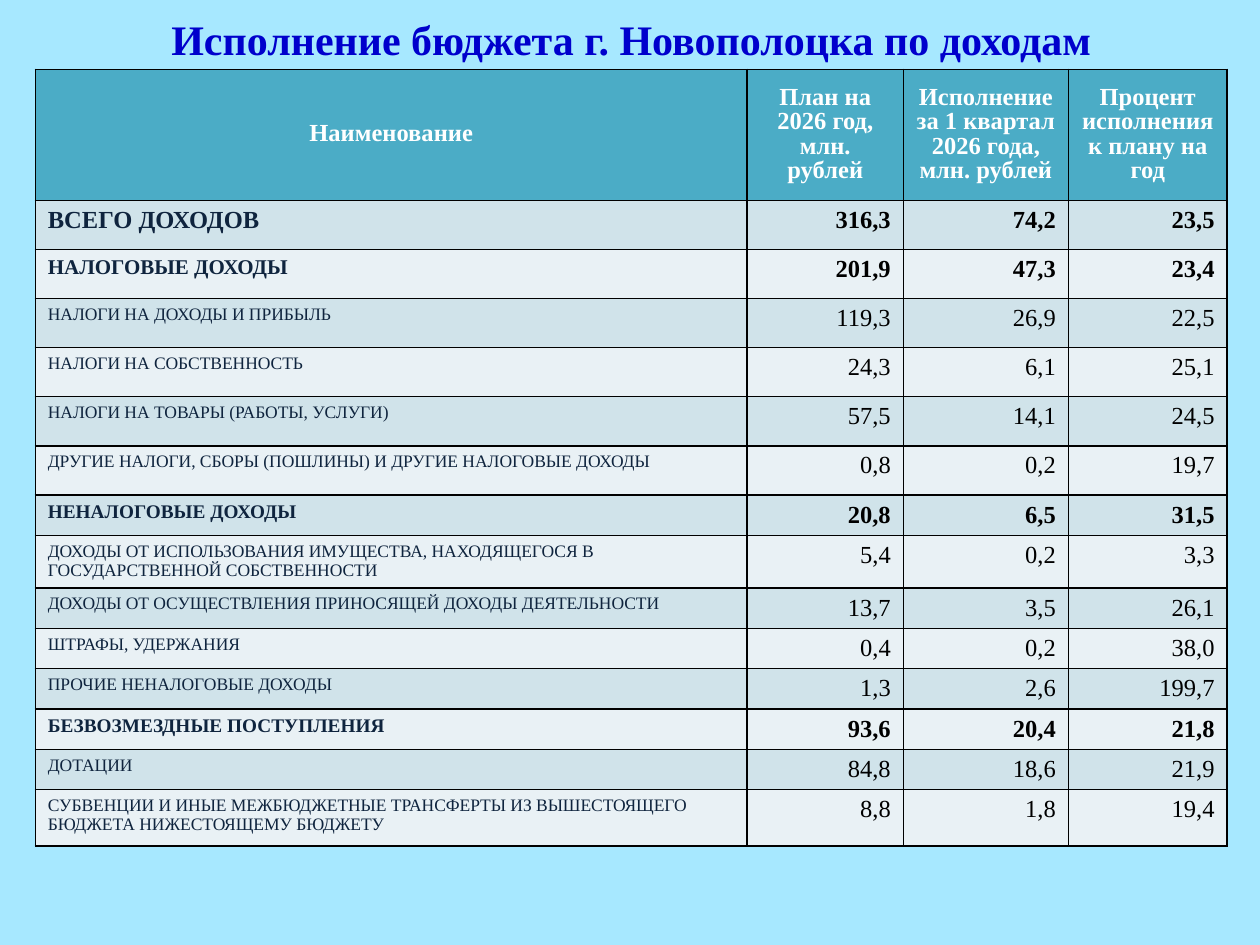
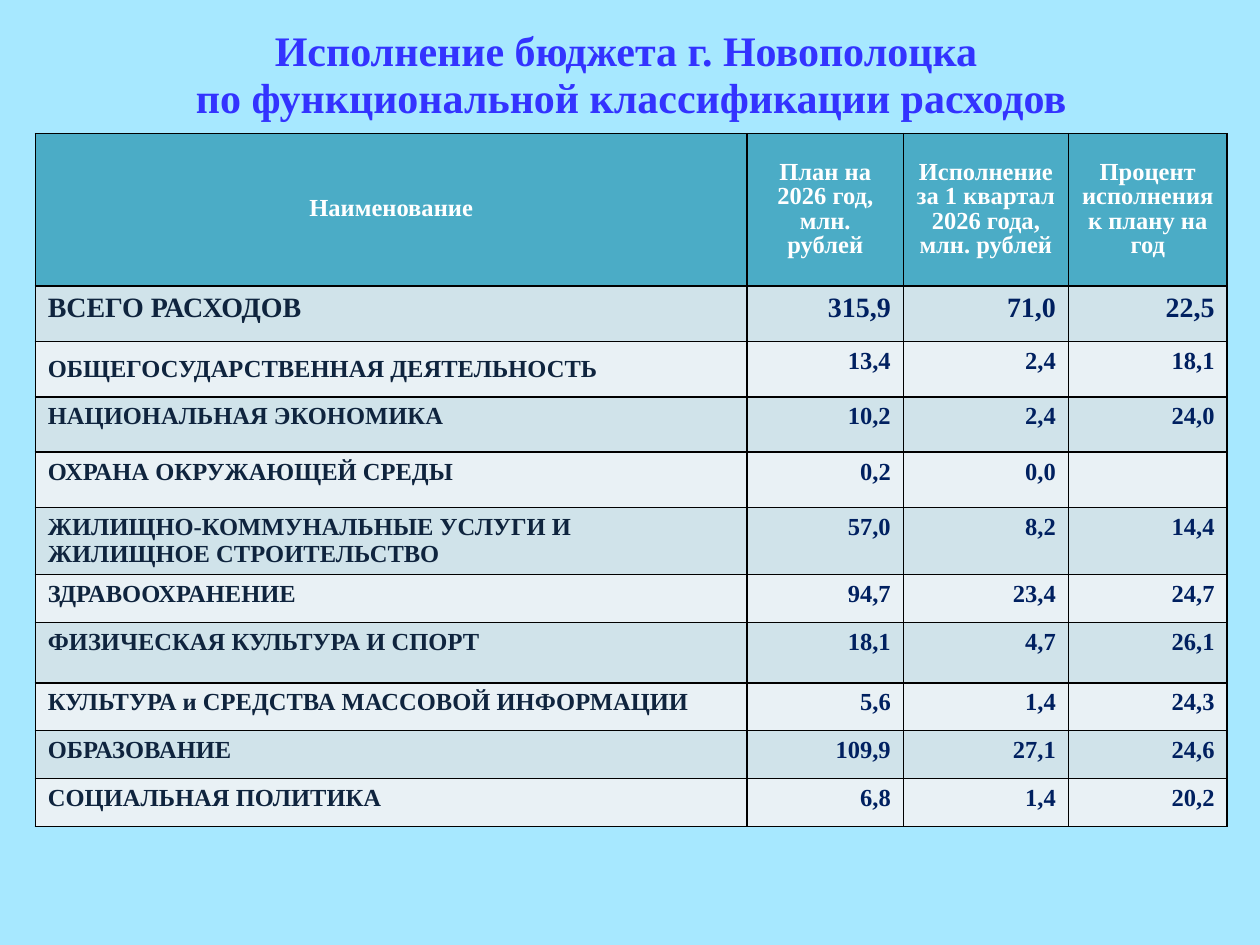
import pptx
import pptx.util
import pptx.dml.color
import pptx.enum.text
import pptx.oxml

Inches = pptx.util.Inches
Pt = pptx.util.Pt
RGB = pptx.dml.color.RGBColor
ALIGN = pptx.enum.text.PP_ALIGN
MIDDLE = pptx.enum.text.MSO_ANCHOR.MIDDLE

SKY = RGB(0xA7, 0xE8, 0xFF)
TEAL = RGB(0x4B, 0xAC, 0xC6)
BANDS = [RGB(0xD0, 0xE3, 0xEA), RGB(0xE9, 0xF1, 0xF5)]
INK = RGB(0x0F, 0x24, 0x3E)
NAVY = RGB(0x00, 0x20, 0x60)
BLACK = RGB(0, 0, 0)
WHITE = RGB(0xFF, 0xFF, 0xFF)
BLUE = RGB(0x00, 0x00, 0xCC)
VIOLET = RGB(0x33, 0x33, 0xFF)
FONT = "Times New Roman"
WIDTHS = [5.65, 1.24, 1.31, 1.26]
HEADS = [
    "Наименование",
    "План на 2026 год, млн. рублей",
    "Исполнение за 1 квартал 2026 года, млн. рублей",
    "Процент исполнения к плану на год",
]

INCOME = [
    (0.39, 14, "ВСЕГО ДОХОДОВ", "316,3", "74,2", "23,5"),
    (0.39, 12, "НАЛОГОВЫЕ ДОХОДЫ", "201,9", "47,3", "23,4"),
    (0.39, 10, "НАЛОГИ НА ДОХОДЫ И ПРИБЫЛЬ", "119,3", "26,9", "22,5"),
    (0.39, 10, "НАЛОГИ НА СОБСТВЕННОСТЬ", "24,3", "6,1", "25,1"),
    (0.39, 10, "НАЛОГИ НА ТОВАРЫ (РАБОТЫ, УСЛУГИ)", "57,5", "14,1", "24,5"),
    (0.39, 10, "ДРУГИЕ НАЛОГИ, СБОРЫ (ПОШЛИНЫ) И ДРУГИЕ НАЛОГОВЫЕ ДОХОДЫ",
     "0,8", "0,2", "19,7"),
    (0.32, 11, "НЕНАЛОГОВЫЕ ДОХОДЫ", "20,8", "6,5", "31,5"),
    (0.42, 10, "ДОХОДЫ ОТ ИСПОЛЬЗОВАНИЯ ИМУЩЕСТВА, НАХОДЯЩЕГОСЯ В "
     "ГОСУДАРСТВЕННОЙ СОБСТВЕННОСТИ", "5,4", "0,2", "3,3"),
    (0.32, 10, "ДОХОДЫ ОТ ОСУЩЕСТВЛЕНИЯ ПРИНОСЯЩЕЙ ДОХОДЫ ДЕЯТЕЛЬНОСТИ",
     "13,7", "3,5", "26,1"),
    (0.32, 10, "ШТРАФЫ, УДЕРЖАНИЯ", "0,4", "0,2", "38,0"),
    (0.32, 10, "ПРОЧИЕ НЕНАЛОГОВЫЕ ДОХОДЫ", "1,3", "2,6", "199,7"),
    (0.32, 11, "БЕЗВОЗМЕЗДНЫЕ ПОСТУПЛЕНИЯ", "93,6", "20,4", "21,8"),
    (0.32, 10, "ДОТАЦИИ", "84,8", "18,6", "21,9"),
    (0.45, 10, "СУБВЕНЦИИ И ИНЫЕ МЕЖБЮДЖЕТНЫЕ ТРАНСФЕРТЫ ИЗ ВЫШЕСТОЯЩЕГО "
     "БЮДЖЕТА НИЖЕСТОЯЩЕМУ БЮДЖЕТУ", "8,8", "1,8", "19,4"),
]

COSTS = [
    (0.44, 16, "ВСЕГО РАСХОДОВ", "315,9", "71,0", "22,5"),
    (0.44, 14, "ОБЩЕГОСУДАРСТВЕННАЯ ДЕЯТЕЛЬНОСТЬ", "13,4", "2,4", "18,1"),
    (0.44, 14, "НАЦИОНАЛЬНАЯ ЭКОНОМИКА", "10,2", "2,4", "24,0"),
    (0.44, 14, "ОХРАНА ОКРУЖАЮЩЕЙ СРЕДЫ", "0,2", "0,0", ""),
    (0.44, 14, "ЖИЛИЩНО-КОММУНАЛЬНЫЕ УСЛУГИ И ЖИЛИЩНОЕ СТРОИТЕЛЬСТВО",
     "57,0", "8,2", "14,4"),
    (0.38, 14, "ЗДРАВООХРАНЕНИЕ", "94,7", "23,4", "24,7"),
    (0.48, 14, "ФИЗИЧЕСКАЯ КУЛЬТУРА И СПОРТ", "18,1", "4,7", "26,1"),
    (0.38, 14, "КУЛЬТУРА и СРЕДСТВА МАССОВОЙ ИНФОРМАЦИИ", "5,6", "1,4", "24,3"),
    (0.38, 14, "ОБРАЗОВАНИЕ", "109,9", "27,1", "24,6"),
    (0.38, 14, "СОЦИАЛЬНАЯ ПОЛИТИКА", "6,8", "1,4", "20,2"),
]

PAGES = [
    ("Исполнение бюджета г. Новополоцка по доходам",
     BLUE, 0.04, 0.32, 44, 0.55, 1.04, INCOME, BLACK),
    ("Исполнение бюджета г. Новополоцка \vпо функциональной классификации расходов",
     VIOLET, 0.13, 0.93, 27, 1.06, 1.21, COSTS, NAVY),
]


def style(para, size, color, bold, align):
    para.alignment = align
    for run in para.runs:
        run.font.name = FONT
        run.font.size = Pt(size)
        run.font.bold = bold
        run.font.color.rgb = color


def fill_cell(cell, text, color):
    props = cell._tc.get_or_add_tcPr()
    for side in "LRTB":
        props.append(pptx.oxml.parse_xml(
            f'<a:ln{side} w="12700" xmlns:a="http://schemas.openxmlformats.org/drawingml/2006/main">'
            f'<a:solidFill><a:srgbClr val="000000"/></a:solidFill></a:ln{side}>'))
    cell.fill.solid()
    cell.fill.fore_color.rgb = color
    cell.text_frame.text = text
    return cell.text_frame.paragraphs[0]


deck = pptx.Presentation()
deck.slide_width = Inches(10)
deck.slide_height = Inches(7.5)
back = deck.slide_master.background.fill
back.solid()
back.fore_color.rgb = SKY

for name, hue, top, high, lead, start, head, rows, ink in PAGES:
    slide = deck.slides.add_slide(deck.slide_layouts[5])
    title = slide.shapes.title
    title.left, title.top = Inches(0.51), Inches(top)
    title.width, title.height = Inches(9), Inches(high)
    frame = title.text_frame
    frame.text = name
    frame.auto_size = pptx.enum.text.MSO_AUTO_SIZE.NONE
    frame.vertical_anchor = MIDDLE
    frame.paragraphs[0].line_spacing = Pt(lead)
    style(frame.paragraphs[0], 24, hue, True, ALIGN.CENTER)

    tall = head + sum(row[0] for row in rows)
    grid = slide.shapes.add_table(
        len(rows) + 1, len(HEADS), Inches(0.28), Inches(start),
        Inches(sum(WIDTHS)), Inches(tall)).table
    for col, width in zip(grid.columns, WIDTHS):
        col.width = Inches(width)
    grid.rows[0].height = Inches(head)
    for c, text in enumerate(HEADS):
        cell = grid.cell(0, c)
        cell.vertical_anchor = MIDDLE
        para = fill_cell(cell, text, TEAL)
        para.line_spacing = Pt(14)
        style(para, 14, WHITE, True, ALIGN.CENTER)

    for r, (height, size, label, *nums) in enumerate(rows, 1):
        grid.rows[r].height = Inches(height)
        band = BANDS[(r - 1) % 2]
        bold = size > 10
        para = fill_cell(grid.cell(r, 0), label, band)
        style(para, size, INK, bold, ALIGN.LEFT)
        for c, num in enumerate(nums, 1):
            para = fill_cell(grid.cell(r, c), num, band)
            style(para, max(size, 14), ink, bold, ALIGN.RIGHT)
    if rows is COSTS:
        grid.cell(2, 0).vertical_anchor = MIDDLE

deck.save("out.pptx")
